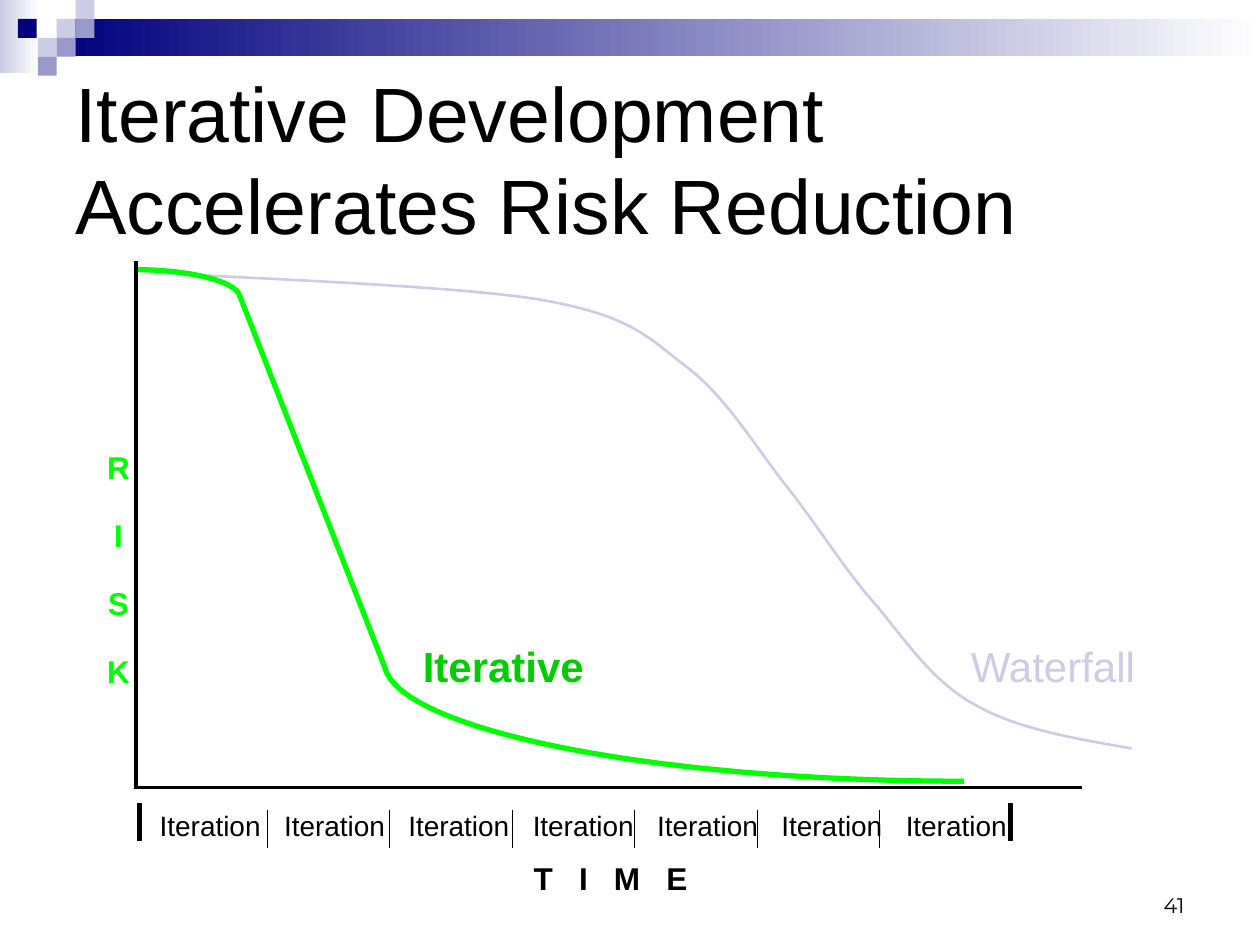
from pptx import Presentation
from pptx.dml.color import RGBColor as Rgb
from pptx.enum.shapes import MSO_CONNECTOR as Conn, MSO_SHAPE as Kind
from pptx.enum.text import MSO_ANCHOR as Anchor, MSO_AUTO_SIZE as Fit, PP_ALIGN as Align
from pptx.oxml.ns import qn
from pptx.util import Pt
from lxml.etree import SubElement as Sub

THEME = {
    "font": "Arial", "page": "Montserrat",
    "ink": "000000", "navy": "00007D", "mid": "9999CC", "pale": "CCCCE6",
    "white": "FFFFFF", "green": "00FF00", "leaf": "00CC00",
    "head": 44, "name": 24, "axis": 18, "step": 16, "foot": 12,
}

TITLE = "Iterative Development Accelerates Risk Reduction"
BANDS = [((0, 0, 22.5, 42), "pale"), ((32.4, 10.8, 687.6, 21.2), "navy")]
TILE = 10.8
TILES = [
    (32.4, 10.8, "pale"), (43.2, 0, "pale"), (43.2, 10.8, "mid"),
    (21.6, 21.6, "pale"), (10.2, 10.8, "navy"), (32.4, 21.6, "mid"),
    (21.6, 32.4, "mid"),
]
FALL = [
    (85, 155.5), (122.4, 158.4), (258.5, 162.7), (309.6, 171.4),
    (361.4, 180.7), (369.4, 192.2), (393.1, 210.2),
    (416.2, 228.2), (432.7, 257), (450.7, 279.4),
    (468.7, 302.4), (483.1, 326.2), (501.1, 346.3),
    (518.4, 367.2), (533.5, 390.2), (558, 403.2),
    (582.5, 416.9), (614.2, 421.9), (646.6, 427.7),
]
CREST = [(77.2, 154.1), (107.8, 154.1), (133.9, 160.6), (136.8, 168.5)]
DROP = ((136.8, 168.5), (219.6, 380.7))
TAIL = [(550.8, 446.4), (372.2, 446.4), (226.1, 416.9), (219.6, 380.2)]
NAMES = [("Waterfall", 547.7, 109.4, "pale", False),
         ("Iterative", 234.5, 106.6, "leaf", True)]
AXES = [((78.5, 450), (618.5, 450)), ((77.8, 149), (77.8, 450.7))]
STEPS = ["Iteration"] * 7
STEP_X, STEP_GAP = 89.1, 71.05
TICK_X, TICK_GAP = 152.6, 70
ENDS = [78.5, 576.2]

deck = Presentation()
deck.slide_width, deck.slide_height = Pt(720), Pt(540)
slide = deck.slides.add_slide(deck.slide_layouts[5])
shapes = slide.shapes


def tint(key):
    return Rgb.from_string(THEME[key])


def write(text, at, box=None, size="axis", color="ink", font="font", bold=False,
          align=Align.LEFT, anchor=Anchor.TOP, wrap=False, pad=(7.2, 3.6),
          lead=1, gap=0, track=0):
    box = box or shapes.add_textbox(0, 0, 0, 0)
    box.left, box.top, box.width, box.height = map(Pt, at)
    frame = box.text_frame
    frame.text = text
    frame.auto_size, frame.word_wrap = Fit.NONE, wrap
    frame.vertical_anchor = anchor
    frame.margin_left = frame.margin_right = Pt(pad[0])
    frame.margin_top = frame.margin_bottom = Pt(pad[1])
    for row, para in enumerate(frame.paragraphs):
        para.alignment, para.line_spacing = align, lead
        para.space_before = Pt(gap if row else 0)
        for run in para.runs:
            face = run.font
            face.name, face.size, face.bold = THEME[font], Pt(THEME[size]), bold
            face.color.rgb = tint(color)
            if track:
                run._r.get_or_add_rPr().set("spc", str(track * 100))


def block(at, color, fade=False):
    rect = shapes.add_shape(Kind.RECTANGLE, *map(Pt, at))
    rect.shadow.inherit = False
    rect.line.fill.background()
    if fade:
        rect.fill.gradient()
        rect.fill.gradient_angle = 0
        for stop, key in zip(rect.fill.gradient_stops, (color, "white")):
            stop.color.rgb = tint(key)
    else:
        rect.fill.solid()
        rect.fill.fore_color.rgb = tint(color)
    return rect


def rule(start, end, width, color="ink"):
    line = shapes.add_connector(Conn.STRAIGHT, *map(Pt, start + end))
    line.line.color.rgb, line.line.width = tint(color), Pt(width)
    Sub(line._element.spPr, qn("a:effectLst"))


def curve(knots, color, width):
    pen = shapes.build_freeform(*map(Pt, knots[0]))
    pen.add_line_segments([tuple(map(Pt, knot)) for knot in knots[1:]], close=False)
    form = pen.convert_to_shape()
    form.shadow.inherit = False
    form.fill.background()
    form.line.color.rgb, form.line.width = tint(color), Pt(width)
    legs = list(form._element.iter(qn("a:lnTo")))
    trace = legs[0].getparent()
    for i in range(0, len(legs), 3):
        arc = Sub(trace, qn("a:cubicBezTo"))
        for leg in legs[i:i + 3]:
            arc.append(leg[0])
            trace.remove(leg)


for at, color in BANDS:
    block(at, color, fade=True)
for x, y, color in TILES:
    block((x, y, TILE, TILE), color)

write(TITLE, (36, 36, 648, 108), box=shapes.title, size="head",
      anchor=Anchor.MIDDLE, wrap=True)
write("41", (516, 492, 168, 36), size="foot", font="page",
      align=Align.RIGHT, anchor=Anchor.BOTTOM, wrap=True)

curve(FALL, "pale", 1.5)
curve(CREST, "green", 3)
rule(*DROP, 3, "green")
curve(TAIL, "green", 3)
for text, x, wide, color, bold in NAMES:
    write(text, (x, 362.6, wide, 36), size="name", color=color, bold=bold)
for start, end in AXES:
    rule(start, end, 2)

write("R\nI\nS\nK", (54.7, 255.6, 26, 142.6), color="green", bold=True,
      align=Align.CENTER, pad=(6.5, 3), lead=0.9, gap=19.4)
write("T I M E", (298.5, 490.3, 100.8, 26), bold=True, pad=(6.5, 3),
      lead=0.9, track=5)

for i, text in enumerate(STEPS):
    write(text, (STEP_X + i * STEP_GAP, 464.4, 62, 17.3), size="step",
          align=Align.CENTER, pad=(0, 0), lead=0.9)
for i in range(len(STEPS) - 1):
    x = TICK_X + i * TICK_GAP
    rule((x, 463), (x, 484.6), 0.1)
for x in ENDS:
    edge = block((x, 458.9, 2.2, 21.6), "ink").line
    edge.color.rgb, edge.width = tint("ink"), Pt(0.5)

deck.save("out.pptx")
